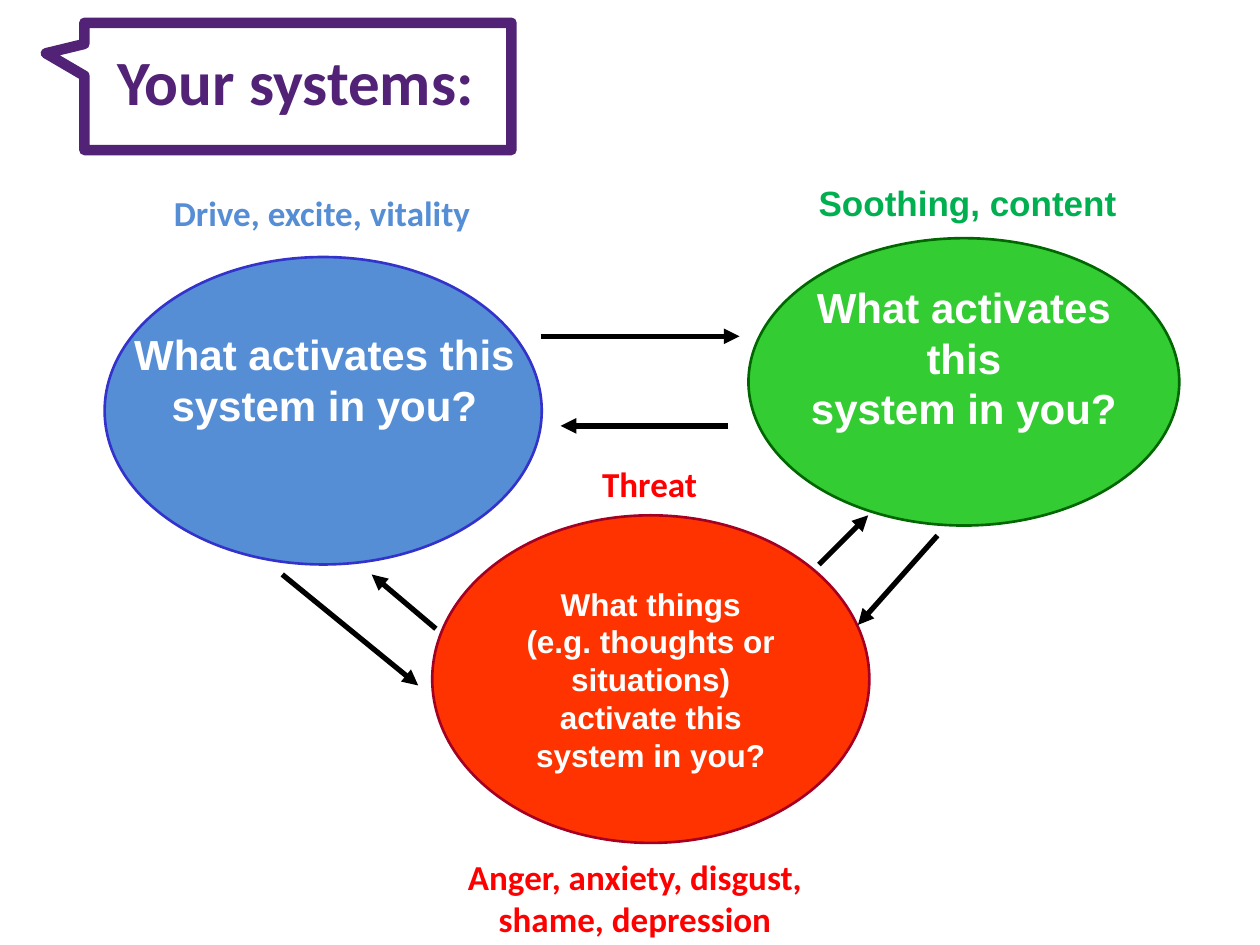
from dataclasses import dataclass

from lxml.etree import SubElement
from pptx import Presentation
from pptx.dml.color import RGBColor
from pptx.enum.shapes import MSO_CONNECTOR, MSO_SHAPE
from pptx.enum.text import MSO_ANCHOR, PP_ALIGN
from pptx.oxml.ns import qn
from pptx.util import Pt


@dataclass(frozen=True)
class Theme:
    purple: str = "512275"
    white: str = "FFFFFF"
    black: str = "000000"
    drive: str = "558ED5"
    drive_edge: str = "3333CC"
    soothing: str = "33CC33"
    soothing_edge: str = "006600"
    soothing_label: str = "00B050"
    threat: str = "FF3300"
    threat_edge: str = "A50021"
    threat_label: str = "FF0000"
    heading_font: str = "Calibri"
    body_font: str = "Arial"
    title_size: int = 36
    question_size: int = 24
    label_size: int = 20
    threat_size: int = 18
    outline: float = 1.5
    arrow: int = 3
    callout: int = 6


THEME = Theme()
QUESTION = ("What activates this", "system in you?")
THREAT_QUESTION = (
    "What things",
    "(e.g. thoughts or",
    "situations)",
    "activate this",
    "system in you?",
)
ARROWS = (
    (309, 192.2, 422.6, 192.2),
    (416.2, 243.4, 320.4, 243.4),
    (161.3, 328.3, 239, 391.7),
    (249.1, 359.3, 212.4, 328.3),
    (535.7, 306, 490.3, 357.1),
    (468, 322.6, 496.1, 294.5),
)


def points(*lengths):
    return [Pt(length) for length in lengths]


def paint(fill, color):
    fill.solid()
    fill.fore_color.rgb = RGBColor.from_string(color)


def write_lines(frame, lines, font, size, color, align=PP_ALIGN.CENTER):
    """Put each line in its own bold paragraph."""
    frame.text = "\n".join(lines)
    for paragraph in frame.paragraphs:
        paragraph.alignment = align
        paragraph.font.name = font
        paragraph.font.size = Pt(size)
        paragraph.font.bold = True
        paragraph.font.color.rgb = RGBColor.from_string(color)


def add_title(slide, text):
    title = slide.shapes.title
    title.left, title.top, title.width, title.height = points(59.8, 13.7, 686.2, 64)
    title.text_frame.vertical_anchor = MSO_ANCHOR.MIDDLE
    write_lines(title.text_frame, [text], THEME.heading_font, THEME.title_size,
                THEME.purple, PP_ALIGN.LEFT)


def add_text(slide, bounds, lines, font, size, color):
    box = slide.shapes.add_textbox(*points(*bounds))
    box.text_frame.word_wrap = True
    write_lines(box.text_frame, lines, font, size, color)
    return box


def add_label(slide, bounds, text, color, font=THEME.heading_font):
    box = add_text(slide, bounds, [text], font, THEME.label_size, color)
    paint(box.fill, THEME.white)


def add_question(slide, bounds):
    add_text(slide, bounds, QUESTION, THEME.body_font, THEME.question_size, THEME.white)


def add_outlined(slide, kind, bounds, edge, weight):
    shape = slide.shapes.add_shape(kind, *points(*bounds))
    shape.shadow.inherit = False
    paint(shape.line.fill, edge)
    shape.line.width = Pt(weight)
    return shape


def add_system(slide, bounds, color, edge):
    oval = add_outlined(slide, MSO_SHAPE.OVAL, bounds, edge, THEME.outline)
    paint(oval.fill, color)
    return oval


def add_arrow(slide, ends):
    arrow = slide.shapes.add_connector(MSO_CONNECTOR.STRAIGHT, *points(*ends))
    paint(arrow.line.fill, THEME.black)
    arrow.line.width = Pt(THEME.arrow)
    SubElement(arrow.line._get_or_add_ln(), qn("a:tailEnd"), type="triangle")
    SubElement(arrow._element.spPr, qn("a:effectLst"))


def add_callout(slide, bounds):
    callout = add_outlined(slide, MSO_SHAPE.RECTANGULAR_CALLOUT, bounds,
                           THEME.purple, THEME.callout)
    callout.fill.background()
    callout.adjustments[0] = -0.59
    callout.adjustments[1] = -0.26
    SubElement(callout.line._get_or_add_ln(), qn("a:round"))


def main():
    deck = Presentation()
    deck.slide_width, deck.slide_height = points(720, 540)
    slide = deck.slides.add_slide(deck.slide_layouts[5])
    add_title(slide, "Your systems:")
    add_label(slide, (257.8, 260.6, 226.8, 31.7), "Threat", THEME.threat_label)

    add_system(slide, (427.7, 136.1, 246.2, 164.2), THEME.soothing, THEME.soothing_edge)
    add_question(slide, (439.2, 157.5, 223.2, 94))

    threat = add_system(slide, (247, 294.5, 249.8, 187.2), THEME.threat, THEME.threat_edge)
    threat.text_frame.word_wrap = False
    threat.text_frame.vertical_anchor = MSO_ANCHOR.MIDDLE
    write_lines(threat.text_frame, THREAT_QUESTION, THEME.body_font,
                THEME.threat_size, THEME.white)

    for ends in ARROWS:
        add_arrow(slide, ends)

    add_system(slide, (59.8, 146.9, 249.8, 175.7), THEME.drive, THEME.drive_edge)
    add_question(slide, (69.1, 184.3, 232.6, 65.5))

    add_label(slide, (70.6, 105.8, 226.8, 31.7), "Drive, excite, vitality", THEME.drive)
    add_label(slide, (411.1, 100.1, 283.7, 31.7), "Soothing, content",
              THEME.soothing_label, THEME.body_font)
    add_label(slide, (229.7, 485.3, 266.4, 54.7),
              "Anger, anxiety, disgust, shame, depression", THEME.threat_label)
    add_callout(slide, (48.2, 13, 244.1, 72.7))
    deck.save("out.pptx")


if __name__ == "__main__":
    main()
